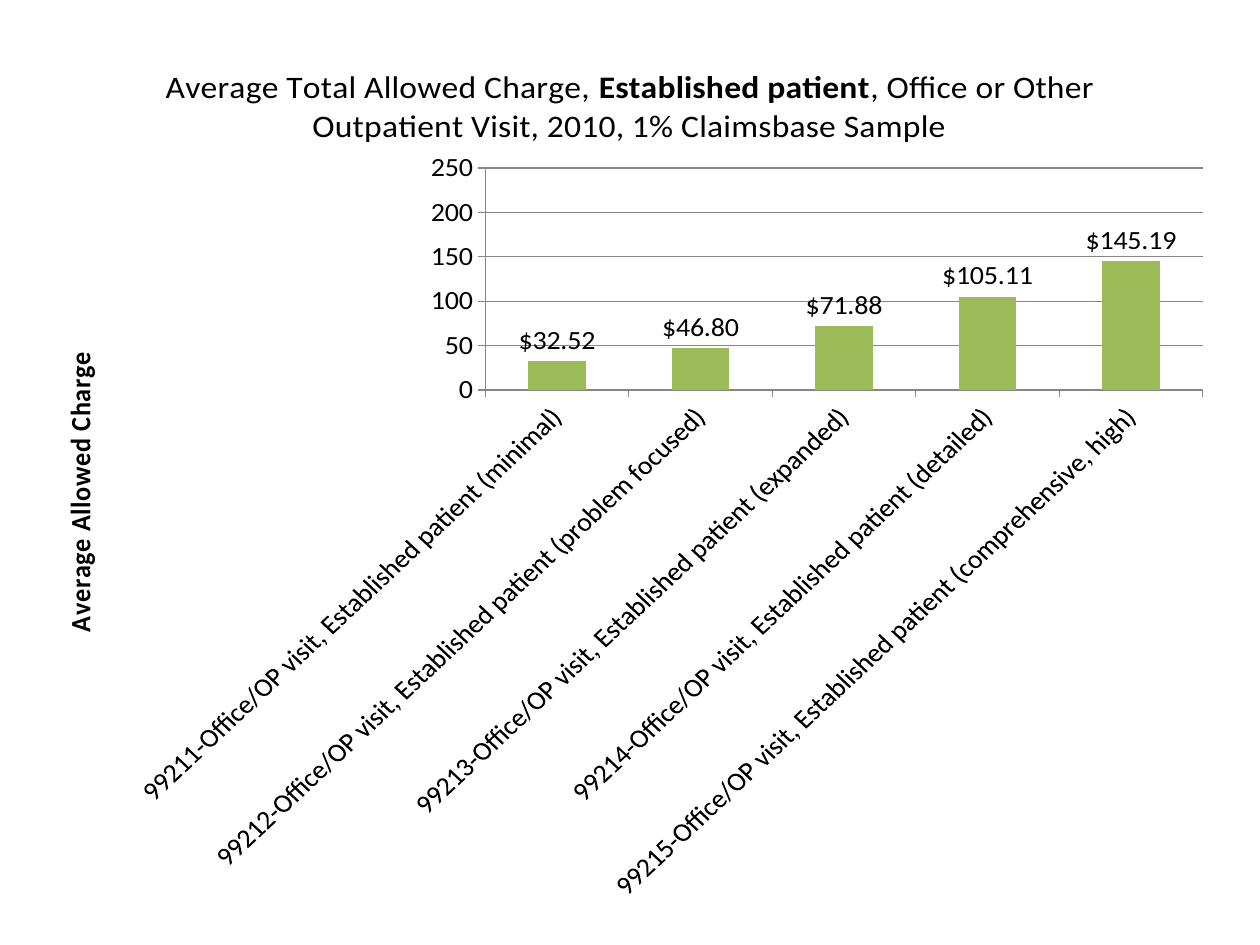
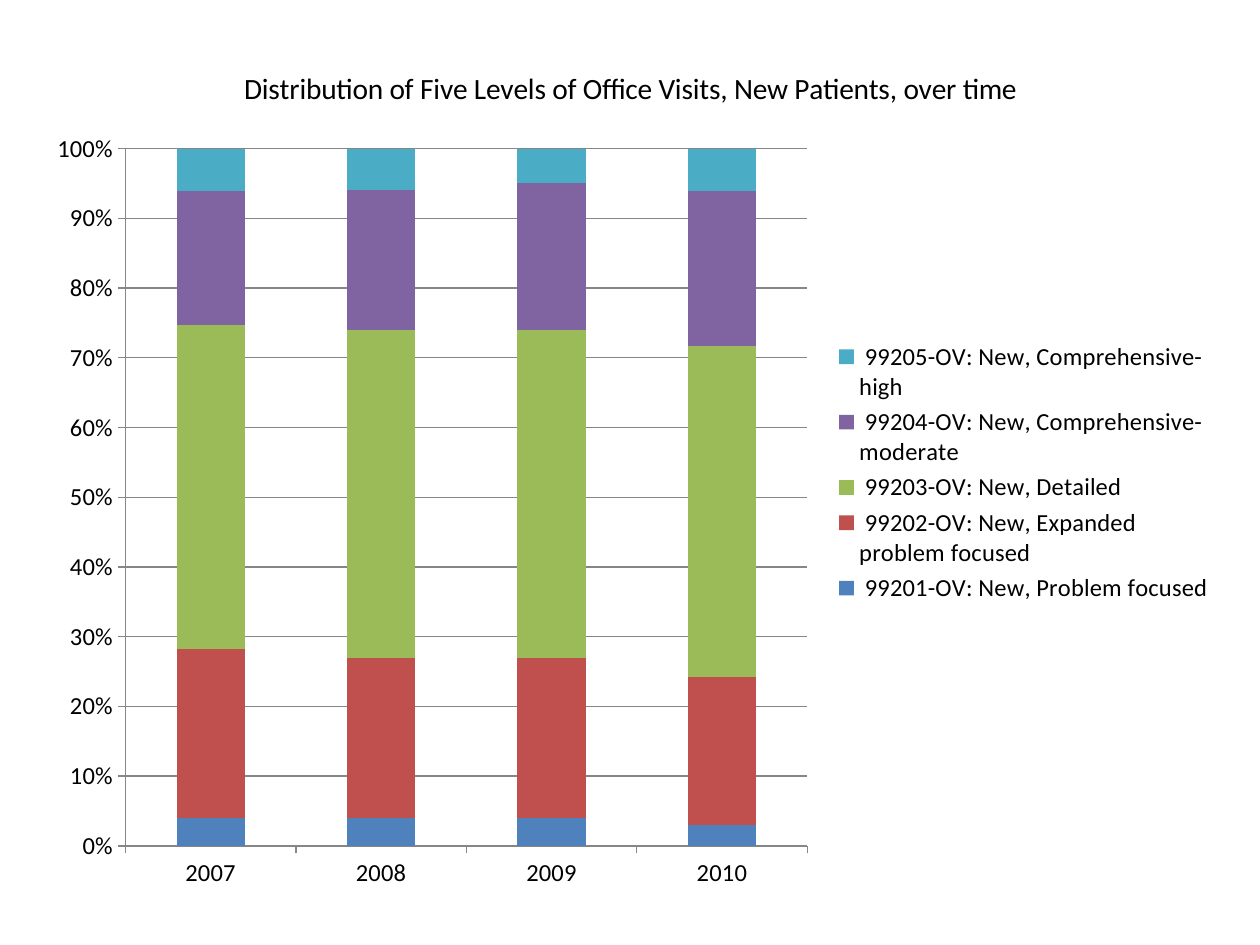
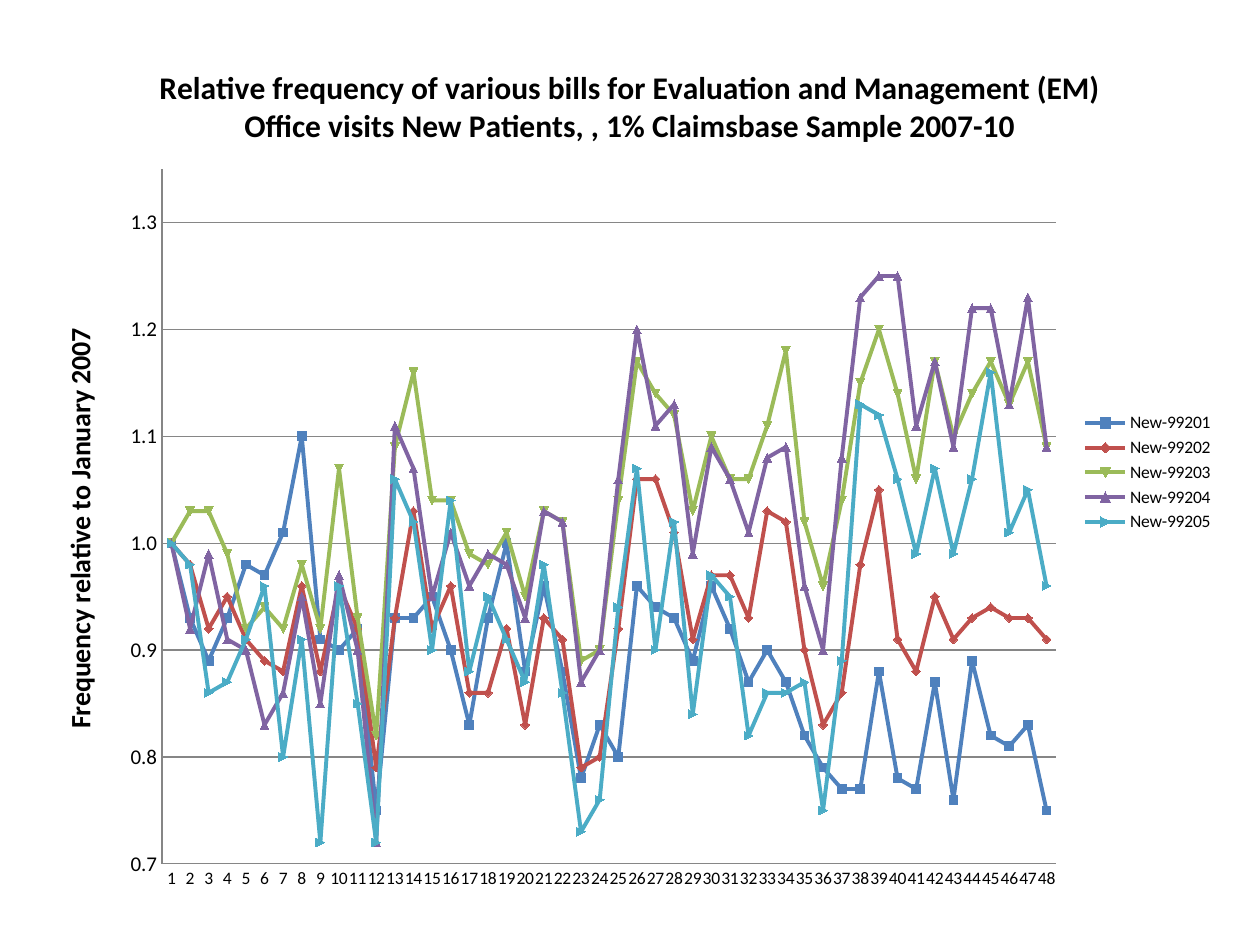
import dataclasses
import typing

import pptx
import pptx.chart.chart
import pptx.chart.data
import pptx.dml.color
import pptx.dml.line
import pptx.enum.chart
import pptx.oxml
import pptx.oxml.ns
import pptx.slide
import pptx.text.text
import pptx.util

RGBColor = pptx.dml.color.RGBColor
ChartType = pptx.enum.chart.XL_CHART_TYPE
TickMark = pptx.enum.chart.XL_TICK_MARK
qn = pptx.oxml.ns.qn

# Shared style
FONT = "Calibri"
BLACK = RGBColor(0x00, 0x00, 0x00)
GRID_GREY = RGBColor(0x86, 0x86, 0x86)
BLUE = RGBColor(0x4F, 0x81, 0xBD)
RED = RGBColor(0xC0, 0x50, 0x4D)
GREEN = RGBColor(0x9B, 0xBB, 0x59)
PURPLE = RGBColor(0x80, 0x64, 0xA2)
CYAN = RGBColor(0x4B, 0xAC, 0xC6)
LEVEL_COLORS = (BLUE, RED, GREEN, PURPLE, CYAN)

SLIDE_WIDTH = pptx.util.Inches(10)
SLIDE_HEIGHT = pptx.util.Inches(7.5)
CHART_WIDTH = pptx.util.Inches(9.47)
CHART_HEIGHT = pptx.util.Inches(6.88)
BLANK_LAYOUT = 6


class TextRun(typing.NamedTuple):
    text: str
    bold: bool = False


class Level(typing.NamedTuple):
    name: str
    values: tuple[float, ...]
    color: RGBColor


@dataclasses.dataclass(frozen=True)
class ChartSpec:
    kind: ChartType
    title: tuple[TextRun, ...]
    title_size: float
    text_size: int
    categories: tuple[str, ...]
    levels: tuple[Level, ...]
    step: float
    value_format: str = "General"
    value_size: int | None = None
    value_title: str = ""
    low: float | None = None
    high: float | None = None
    tick_mark: TickMark = TickMark.OUTSIDE
    label_angle: int = 0
    label_format: str = ""
    has_legend: bool = True


# Average charge per visit level
CHARGES = ChartSpec(
    kind=ChartType.COLUMN_CLUSTERED,
    title=(
        TextRun("Average Total Allowed Charge, "),
        TextRun("Established patient", bold=True),
        TextRun(", Office or Other Outpatient Visit, 2010, 1% Claimsbase Sample"),
    ),
    title_size=19.2,
    text_size=16,
    categories=tuple(
        f" {code}-Office/OP visit, Established patient ({depth})"
        for code, depth in enumerate(
            ("minimal", "problem focused", "expanded", "detailed", "comprehensive, high"),
            start=99211,
        )
    ),
    levels=(Level("Series 1", (32.52, 46.8, 71.88, 105.11, 145.19), GREEN),),
    step=50,
    value_title="Average Allowed Charge",
    low=0,
    high=250,
    label_angle=-45,
    label_format='"$"#,##0.00',
    has_legend=False,
)

# Share of each visit level per year
SHARES = (
    ("Problem focused", (4, 4, 4, 3)),
    ("Expanded problem focused", (24, 23, 23, 21)),
    ("Detailed", (46, 47, 47, 47)),
    ("Comprehensive-moderate", (19, 20, 21, 22)),
    ("Comprehensive-high", (6, 6, 5, 6)),
)
DISTRIBUTION = ChartSpec(
    kind=ChartType.COLUMN_STACKED_100,
    title=(TextRun("Distribution of Five Levels of Office Visits, New Patients, over time"),),
    title_size=16.8,
    text_size=14,
    categories=tuple(str(year) for year in range(2007, 2011)),
    levels=tuple(
        Level(f" {code}-OV: New, {depth}", values, color)
        for code, ((depth, values), color) in enumerate(zip(SHARES, LEVEL_COLORS), start=99201)
    ),
    step=0.1,
    value_format="0%",
)

# Monthly frequency of each visit level, one row per year
MONTHLY = (
    (
        1, 0.93, 0.89, 0.93, 0.98, 0.97, 1.01, 1.1, 0.91, 0.9, 0.92, 0.75,
        0.93, 0.93, 0.95, 0.9, 0.83, 0.93, 1, 0.88, 0.96, 0.88, 0.78, 0.83,
        0.8, 0.96, 0.94, 0.93, 0.89, 0.96, 0.92, 0.87, 0.9, 0.87, 0.82, 0.79,
        0.77, 0.77, 0.88, 0.78, 0.77, 0.87, 0.76, 0.89, 0.82, 0.81, 0.83, 0.75,
    ),
    (
        1, 0.98, 0.92, 0.95, 0.91, 0.89, 0.88, 0.96, 0.88, 0.96, 0.92, 0.79,
        0.93, 1.03, 0.92, 0.96, 0.86, 0.86, 0.92, 0.83, 0.93, 0.91, 0.79, 0.8,
        0.92, 1.06, 1.06, 1.01, 0.91, 0.97, 0.97, 0.93, 1.03, 1.02, 0.9, 0.83,
        0.86, 0.98, 1.05, 0.91, 0.88, 0.95, 0.91, 0.93, 0.94, 0.93, 0.93, 0.91,
    ),
    (
        1, 1.03, 1.03, 0.99, 0.92, 0.94, 0.92, 0.98, 0.92, 1.07, 0.93, 0.82,
        1.09, 1.16, 1.04, 1.04, 0.99, 0.98, 1.01, 0.95, 1.03, 1.02, 0.89, 0.9,
        1.04, 1.17, 1.14, 1.12, 1.03, 1.1, 1.06, 1.06, 1.11, 1.18, 1.02, 0.96,
        1.04, 1.15, 1.2, 1.14, 1.06, 1.17, 1.1, 1.14, 1.17, 1.13, 1.17, 1.09,
    ),
    (
        1, 0.92, 0.99, 0.91, 0.9, 0.83, 0.86, 0.95, 0.85, 0.97, 0.9, 0.72,
        1.11, 1.07, 0.95, 1.01, 0.96, 0.99, 0.98, 0.93, 1.03, 1.02, 0.87, 0.9,
        1.06, 1.2, 1.11, 1.13, 0.99, 1.09, 1.06, 1.01, 1.08, 1.09, 0.96, 0.9,
        1.08, 1.23, 1.25, 1.25, 1.11, 1.17, 1.09, 1.22, 1.22, 1.13, 1.23, 1.09,
    ),
    (
        1, 0.98, 0.86, 0.87, 0.91, 0.96, 0.8, 0.91, 0.72, 0.96, 0.85, 0.72,
        1.06, 1.02, 0.9, 1.04, 0.88, 0.95, 0.91, 0.87, 0.98, 0.86, 0.73, 0.76,
        0.94, 1.07, 0.9, 1.02, 0.84, 0.97, 0.95, 0.82, 0.86, 0.86, 0.87, 0.75,
        0.89, 1.13, 1.12, 1.06, 0.99, 1.07, 0.99, 1.06, 1.16, 1.01, 1.05, 0.96,
    ),
)
FREQUENCY = ChartSpec(
    kind=ChartType.LINE_MARKERS,
    title=(
        TextRun("Relative frequency of various bills for Evaluation and Management (EM) ", bold=True),
        TextRun("Office visits New Patients, ", bold=True),
        TextRun(", 1% Claimsbase Sample 2007-10", bold=True),
    ),
    title_size=18,
    text_size=10,
    categories=tuple(str(month) for month in range(1, 49)),
    levels=tuple(
        Level(f"New-{code}", values, color)
        for code, (values, color) in enumerate(zip(MONTHLY, LEVEL_COLORS), start=99201)
    ),
    step=0.1,
    value_format="0.0",
    value_size=12,
    value_title="Frequency relative to January 2007",
    low=0.7,
    high=1.35,
    tick_mark=TickMark.NONE,
)


def style_font(font: pptx.text.text.Font, size: float, bold: bool = False) -> None:
    font.name = FONT
    font.size = pptx.util.Pt(size)
    font.bold = bold
    font.color.rgb = BLACK


def style_line(line: pptx.dml.line.LineFormat, color: RGBColor, width: float) -> None:
    line.color.rgb = color
    line.width = pptx.util.Pt(width)


def write_runs(frame: pptx.text.text.TextFrame, runs: tuple[TextRun, ...], size: float) -> None:
    for part in runs:
        run = frame.paragraphs[0].add_run()
        run.text = part.text
        style_font(run.font, size, part.bold)


def style_axes(chart: pptx.chart.chart.Chart, spec: ChartSpec) -> None:
    groups, amounts = chart.category_axis, chart.value_axis
    for axis, size in ((groups, spec.text_size), (amounts, spec.value_size or spec.text_size)):
        axis.major_tick_mark = spec.tick_mark
        axis.minor_tick_mark = TickMark.NONE
        style_line(axis.format.line, GRID_GREY, 0.75)
        style_font(axis.tick_labels.font, size)
    amounts.has_major_gridlines = True
    style_line(amounts.major_gridlines.format.line, GRID_GREY, 0.75)
    amounts.major_unit = spec.step
    amounts.minimum_scale = spec.low
    amounts.maximum_scale = spec.high
    amounts.tick_labels.number_format = spec.value_format
    amounts.tick_labels.number_format_is_linked = False
    if spec.value_title:
        write_runs(amounts.axis_title.text_frame, (TextRun(spec.value_title, True),), 16)

    # Label angle, and a label for every category
    category_xml = chart.element.find(".//" + qn("c:catAx"))
    body = category_xml.find(qn("c:txPr")).find(qn("a:bodyPr"))
    body.set("rot", str(spec.label_angle * 60000))
    body.set("vert", "horz")
    skip = pptx.oxml.parse_xml(f'<c:tickLblSkip {pptx.oxml.ns.nsdecls("c")} val="1"/>')
    category_xml.find(qn("c:noMultiLvlLbl")).addprevious(skip)


def style_levels(chart: pptx.chart.chart.Chart, spec: ChartSpec) -> None:
    plot = chart.plots[0]
    plot.vary_by_categories = False
    is_line = spec.kind == ChartType.LINE_MARKERS
    if not is_line:
        plot.gap_width = 150
    for series, level in zip(plot.series, spec.levels):
        if is_line:
            series.smooth = False
            style_line(series.format.line, level.color, 2.25)
            series.marker.size = 5
            series.marker.format.fill.solid()
            series.marker.format.fill.fore_color.rgb = level.color
            style_line(series.marker.format.line, level.color, 0.75)
        else:
            series.format.fill.solid()
            series.format.fill.fore_color.rgb = level.color
    if spec.label_format:
        plot.has_data_labels = True
        labels = plot.data_labels
        labels.show_value = True
        labels.number_format = spec.label_format
        labels.number_format_is_linked = False
        labels.position = pptx.enum.chart.XL_LABEL_POSITION.OUTSIDE_END
        style_font(labels.font, spec.text_size)


def draw_chart(slide: pptx.slide.Slide, spec: ChartSpec) -> None:
    figures = pptx.chart.data.CategoryChartData()
    figures.categories = spec.categories
    for level in spec.levels:
        figures.add_series(level.name, level.values)
    chart = slide.shapes.add_chart(
        spec.kind,
        (SLIDE_WIDTH - CHART_WIDTH) // 2,
        (SLIDE_HEIGHT - CHART_HEIGHT) // 2,
        CHART_WIDTH,
        CHART_HEIGHT,
        figures,
    ).chart
    style_font(chart.font, spec.text_size)
    chart.has_title = True
    write_runs(chart.chart_title.text_frame, spec.title, spec.title_size)
    chart.chart_title.include_in_layout = False
    chart.has_legend = spec.has_legend
    if spec.has_legend:
        chart.legend.position = pptx.enum.chart.XL_LEGEND_POSITION.RIGHT
        chart.legend.include_in_layout = False
        style_font(chart.legend.font, spec.text_size)
    style_axes(chart, spec)
    style_levels(chart, spec)


def main() -> None:
    deck = pptx.Presentation()
    deck.slide_width = SLIDE_WIDTH
    deck.slide_height = SLIDE_HEIGHT
    for spec in (CHARGES, DISTRIBUTION, FREQUENCY):
        draw_chart(deck.slides.add_slide(deck.slide_layouts[BLANK_LAYOUT]), spec)
    deck.save("out.pptx")


if __name__ == "__main__":
    main()
